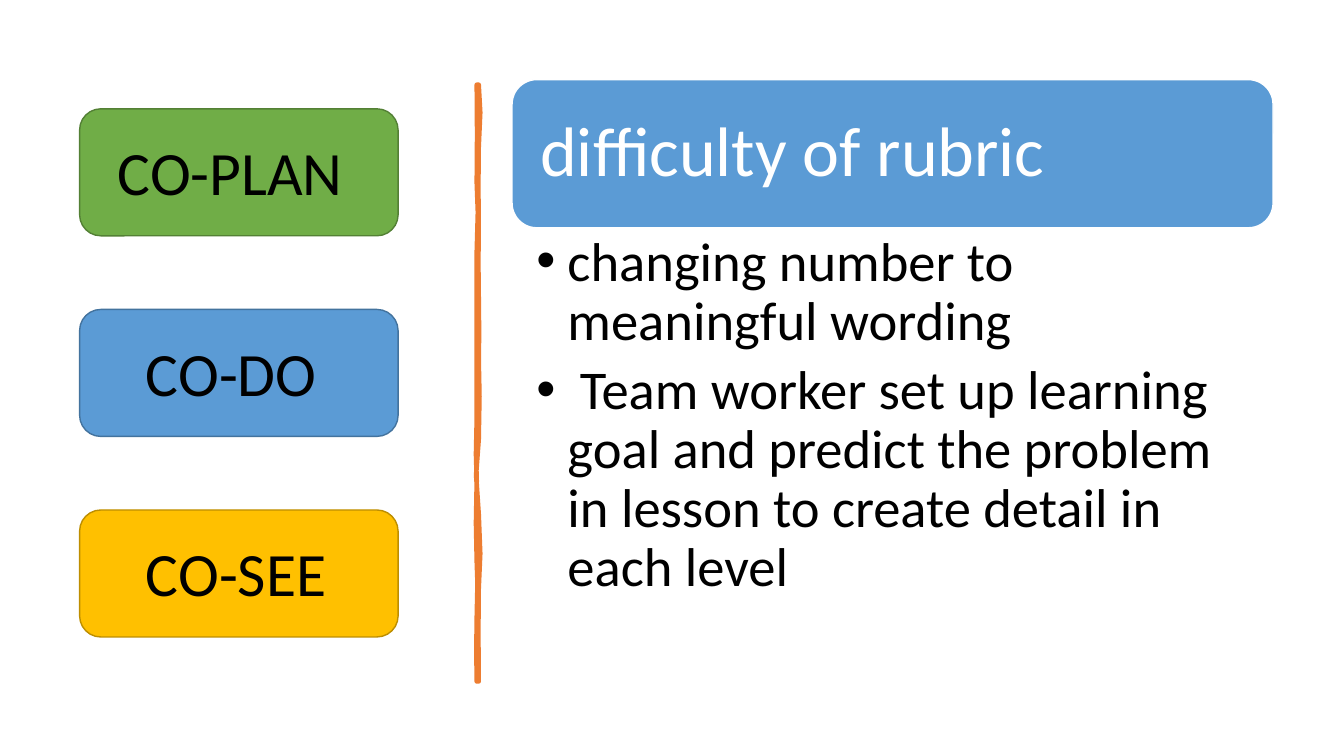
"""Build the rubric difficulty slide with its three lesson study stages."""
from dataclasses import dataclass

from lxml.etree import SubElement
from pptx import Presentation
from pptx.dml.color import RGBColor
from pptx.enum.shapes import MSO_SHAPE
from pptx.enum.text import MSO_ANCHOR, MSO_AUTO_SIZE
from pptx.oxml.ns import qn
from pptx.util import Inches, Pt

WHITE = RGBColor(0xFF, 0xFF, 0xFF)
BLACK = RGBColor(0x00, 0x00, 0x00)
BLUE = RGBColor(0x5B, 0x9B, 0xD5)
DARK_BLUE = RGBColor(0x43, 0x73, 0x9E)
GREEN = RGBColor(0x70, 0xAD, 0x47)
DARK_GREEN = RGBColor(0x53, 0x80, 0x35)
GOLD = RGBColor(0xFF, 0xC0, 0x00)
DARK_GOLD = RGBColor(0xBD, 0x8E, 0x00)
ORANGE = RGBColor(0xED, 0x7D, 0x31)
FONT = "Calibri"
BULLET_INDENT = 0.31


@dataclass(frozen=True)
class Box:
    left: float
    top: float
    width: float
    height: float


@dataclass(frozen=True)
class Stage:
    label: str
    label_left: float
    label_width: float
    fill: RGBColor
    line: RGBColor


@dataclass(frozen=True)
class Curve:
    x1: float
    y1: float
    x2: float
    y2: float
    x: float
    y: float


STAGES = [
    Stage("CO-PLAN", 1.07, 2.59, GREEN, DARK_GREEN),
    Stage("CO-DO", 1.35, 2.03, BLUE, DARK_BLUE),
    Stage("CO-SEE", 1.35, 2.17, GOLD, DARK_GOLD),
]
STAGE_TOP, STAGE_PITCH = 1.08, 1.99

POINTS = [
    "changing number to meaningful wording",
    " Team worker set up learning goal and predict the problem "
    "in lesson to create detail in each level",
]

DIVIDER_START = (4.75, 0.84)
DIVIDER = [
    Curve(4.77, 1.02, 4.77, 1.19, 4.75, 1.46),
    Curve(4.73, 1.73, 4.76, 1.95, 4.75, 2.26),
    Curve(4.74, 2.57, 4.75, 2.62, 4.75, 2.94),
    Curve(4.74, 3.25, 4.77, 3.42, 4.75, 3.56),
    Curve(4.73, 3.70, 4.79, 4.14, 4.75, 4.36),
    Curve(4.71, 4.57, 4.72, 4.84, 4.75, 5.10),
    Curve(4.77, 5.36, 4.77, 5.64, 4.75, 5.84),
    Curve(4.73, 6.03, 4.76, 6.50, 4.75, 6.76),
    Curve(4.74, 6.76, 4.73, 6.76, 4.73, 6.76),
    Curve(4.74, 6.46, 4.71, 6.44, 4.73, 6.13),
    Curve(4.74, 5.83, 4.74, 5.70, 4.73, 5.57),
    Curve(4.72, 5.44, 4.72, 4.95, 4.73, 4.77),
    Curve(4.73, 4.59, 4.71, 4.45, 4.73, 4.15),
    Curve(4.74, 3.86, 4.72, 3.73, 4.73, 3.35),
    Curve(4.74, 2.98, 4.72, 2.81, 4.73, 2.50),
    Curve(4.74, 2.18, 4.75, 2.00, 4.73, 1.81),
    Curve(4.70, 1.63, 4.77, 1.04, 4.73, 0.84),
]


def place(box: Box) -> tuple:
    """Return the box as lengths."""
    return tuple(Inches(v) for v in (box.left, box.top, box.width, box.height))


def paint(sp, fill: RGBColor, line: RGBColor, width: float) -> None:
    """Give a shape a flat fill and outline."""
    sp.shadow.inherit = False
    sp.fill.solid()
    sp.fill.fore_color.rgb = fill
    sp.line.color.rgb = line
    sp.line.width = Pt(width)


def add_round_box(s, box: Box, fill: RGBColor, line: RGBColor) -> None:
    """Draw a rounded rectangle."""
    sp = s.shapes.add_shape(MSO_SHAPE.ROUNDED_RECTANGLE, *place(box))
    paint(sp, fill, line, 1)


def add_text(s, box: Box, text: str, size: float, color: RGBColor,
             insets: tuple = (0.1, 0.05, 0.1, 0.05)):
    """Add wrapped text and return its frame."""
    tf = s.shapes.add_textbox(*place(box)).text_frame
    tf.word_wrap = True
    tf.margin_left, tf.margin_top, tf.margin_right, tf.margin_bottom = map(Inches, insets)
    tf.text = text
    for p in tf.paragraphs:
        for r in p.runs:
            r.font.name, r.font.size = FONT, Pt(size)
            r.font.color.rgb = color
    return tf


def add_bullet(p) -> None:
    """Turn a paragraph into a hanging bullet."""
    pPr = p._p.get_or_add_pPr()
    pPr.set("marL", str(Inches(BULLET_INDENT)))
    pPr.set("indent", str(-Inches(BULLET_INDENT)))
    SubElement(pPr, qn("a:buFont"), typeface="Arial")
    SubElement(pPr, qn("a:buChar"), char="•")


def flatten(start: tuple, curves: list[Curve]) -> list[tuple]:
    """Return the middle and the end of each cubic curve."""
    points, (x0, y0) = [], start
    for c in curves:
        middle = ((x0 + 3 * c.x1 + 3 * c.x2 + c.x) / 8, (y0 + 3 * c.y1 + 3 * c.y2 + c.y) / 8)
        points += [middle, (c.x, c.y)]
        x0, y0 = c.x, c.y
    return [(Inches(x), Inches(y)) for x, y in points]


def add_divider(s) -> None:
    """Draw the hand-sketched vertical divider."""
    builder = s.shapes.build_freeform(*map(Inches, DIVIDER_START))
    builder.add_line_segments(flatten(DIVIDER_START, DIVIDER), close=True)
    paint(builder.convert_to_shape(), ORANGE, ORANGE, 3.25)


def add_rubric(s) -> None:
    """Draw the heading and its bullet points."""
    add_round_box(s, Box(5.08, 0.79, 7.55, 1.47), BLUE, WHITE)
    tf = add_text(s, Box(5.15, 0.86, 7.4, 1.33), "difficulty of rubric", 50, WHITE, (0.21,) * 4)
    tf.vertical_anchor = MSO_ANCHOR.MIDDLE
    tf.paragraphs[0].line_spacing = 0.9
    tf = add_text(s, Box(5.08, 2.25, 7.55, 4.41), "\n".join(POINTS), 39, BLACK,
                  (0.24, 0.07, 0.39, 0.07))
    for p in tf.paragraphs:
        p.level = 1
        p.line_spacing = 0.9
        p.space_after = Pt(7.8)
        add_bullet(p)


def add_stages(s) -> None:
    """Draw the column of stages."""
    for i, stage in enumerate(STAGES):
        top = STAGE_TOP + i * STAGE_PITCH
        add_round_box(s, Box(0.79, top, 3.16, 1.26), stage.fill, stage.line)
        box = Box(stage.label_left, top + 0.2, stage.label_width, 0.84)
        tf = add_text(s, box, stage.label, 44, BLACK)
        tf.auto_size = MSO_AUTO_SIZE.SHAPE_TO_FIT_TEXT


def main() -> None:
    """Build and save the slide."""
    prs = Presentation()
    prs.slide_width, prs.slide_height = Inches(40 / 3), Inches(7.5)
    s = prs.slides.add_slide(prs.slide_layouts[6])
    add_divider(s)
    add_rubric(s)
    add_stages(s)
    prs.save("out.pptx")


if __name__ == "__main__":
    main()
